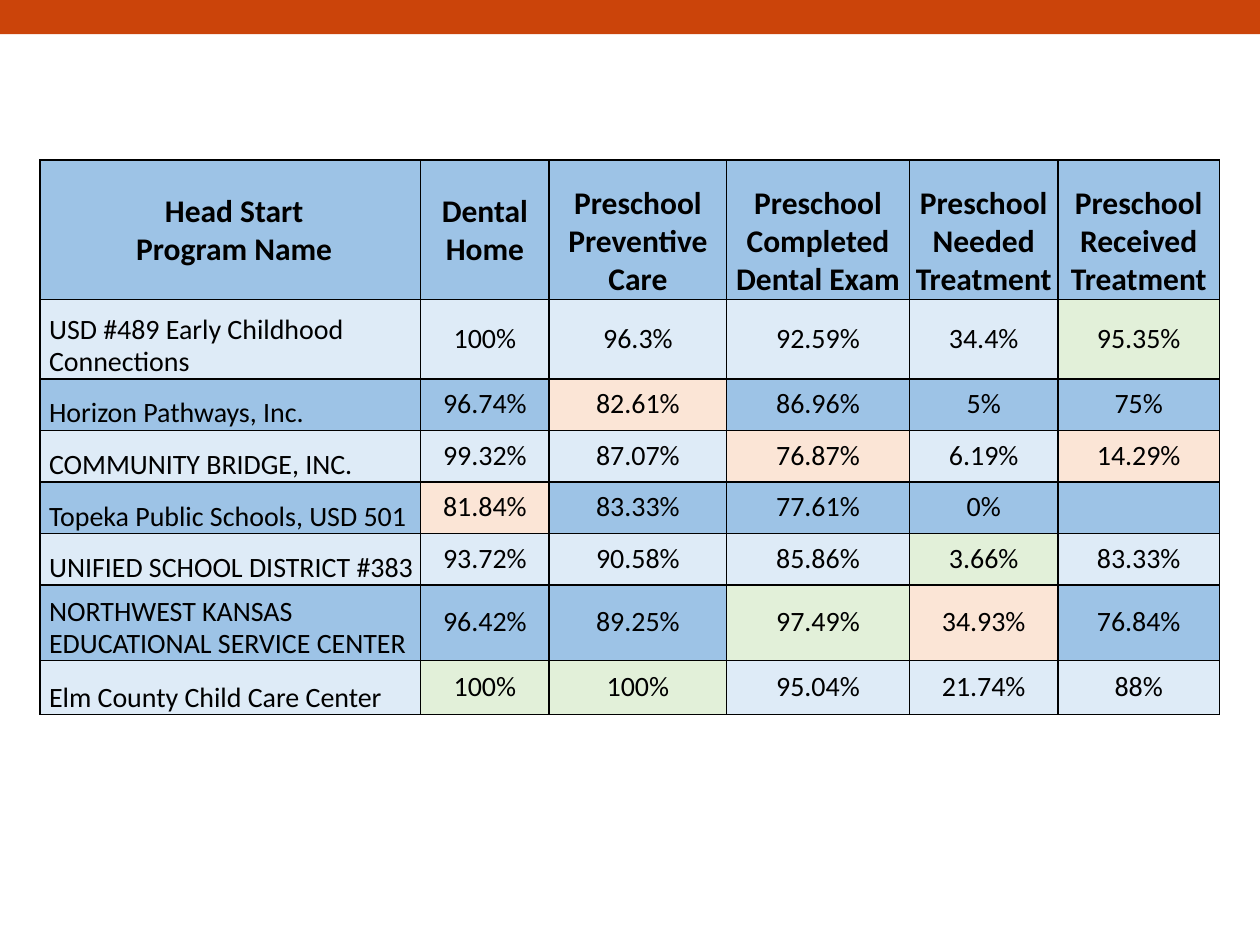
import pptx
import pptx.util
import pptx.dml.color
import pptx.enum.shapes
import pptx.enum.text
import pptx.oxml

Cm = pptx.util.Cm
Pt = pptx.util.Pt
ALIGN = pptx.enum.text.PP_ALIGN
ANCHOR = pptx.enum.text.MSO_ANCHOR

HEADS = ["Head Start\nProgram Name", "Dental Home", "Preschool Preventive Care",
         "Preschool Completed Dental Exam", "Preschool Needed Treatment",
         "Preschool Received Treatment"]
ROWS = [
    ["USD #489 Early Childhood Connections", "100%", "96.3%", "92.59%", "34.4%", "95.35%"],
    ["Horizon Pathways, Inc.", "96.74%", "82.61%", "86.96%", "5%", "75%"],
    ["COMMUNITY BRIDGE, INC.", "99.32%", "87.07%", "76.87%", "6.19%", "14.29%"],
    ["Topeka Public Schools, USD 501", "81.84%", "83.33%", "77.61%", "0%", ""],
    ["UNIFIED SCHOOL DISTRICT #383", "93.72%", "90.58%", "85.86%", "3.66%", "83.33%"],
    ["NORTHWEST KANSAS EDUCATIONAL SERVICE CENTER", "96.42%", "89.25%", "97.49%",
     "34.93%", "76.84%"],
    ["Elm County Child Care Center", "100%", "100%", "95.04%", "21.74%", "88%"],
]
WIDTHS = [7.67, 2.59, 3.58, 3.68, 3, 3.25]
HEIGHTS = [2.8, 1.6, 1.04, 1.04, 1.04, 1.04, 1.52, 1.09]
BEST = {(1, 5), (5, 4), (6, 3), (7, 1), (7, 2)}
WORST = {(2, 2), (3, 3), (3, 5), (4, 1), (6, 4)}
BANDS = ["9DC3E6", "DEEBF7"]


def color(code):
    return pptx.dml.color.RGBColor.from_string(code)


def apply(item, values):
    for name, value in values.items():
        setattr(item, name, value)


def paint(item, code):
    item.fill.solid()
    item.fill.fore_color.rgb = color(code)


def border(cell):
    props = cell._tc.get_or_add_tcPr()
    for side in "LRTB":
        props.append(pptx.oxml.parse_xml(
            f'<a:ln{side} xmlns:a="http://schemas.openxmlformats.org/drawingml/2006/main"'
            f' w="{Pt(1)}"><a:solidFill><a:srgbClr val="000000"/></a:solidFill></a:ln{side}>'))


def write(cell, text, para, font):
    frame = cell.text_frame
    for i, line in enumerate(text.split("\n")):
        part = frame.add_paragraph() if i else frame.paragraphs[0]
        apply(part, para)
        if line:
            run = part.add_run()
            run.text = line
            apply(run.font, {"name": "Calibri", **font})
            run.font.color.rgb = color("000000")


def shade(row, col):
    if (row, col) in BEST:
        return "E2F0D9"
    if (row, col) in WORST:
        return "FBE5D6"
    return BANDS[row % 2]


def draw_cell(cell, row, col, text):
    head, first = row == 0, col == 0
    apply(cell, {
        "margin_left": Cm(0.18 if first else 0.03),
        "margin_right": Cm(0.03),
        "margin_top": Cm(0.48 if head and col > 1 else 0.03),
        "margin_bottom": 0,
        "vertical_anchor": ANCHOR.BOTTOM if first and not head else ANCHOR.MIDDLE,
    })
    para = {"alignment": ALIGN.LEFT if first and not head else ALIGN.CENTER}
    if not head:
        para["line_spacing"] = Pt(18)
    write(cell, text, para, {"size": Pt(18 if head else 16), "bold": head})
    border(cell)
    paint(cell, shade(row, col))


def draw_band(slide, left, top, width, height):
    band = slide.shapes.add_shape(pptx.enum.shapes.MSO_SHAPE.RECTANGLE,
                                  Cm(left), Cm(top), Cm(width), Cm(height))
    band.shadow.inherit = False
    paint(band, "CB440A")
    band.line.fill.background()


def draw_table(slide, left, top):
    data = [HEADS] + ROWS
    table = slide.shapes.add_table(len(data), len(HEADS), Cm(left), Cm(top),
                                   Cm(sum(WIDTHS)), Cm(sum(HEIGHTS))).table
    apply(table, {"first_row": False, "horz_banding": False})
    for col, width in zip(table.columns, WIDTHS):
        col.width = Cm(width)
    for row, height in zip(table.rows, HEIGHTS):
        row.height = Cm(height)
    for r, texts in enumerate(data):
        for c, text in enumerate(texts):
            draw_cell(table.cell(r, c), r, c, text)


def main():
    deck = pptx.Presentation()
    apply(deck, {"slide_width": Cm(25.4), "slide_height": Cm(19.05)})
    slide = deck.slides.add_slide(deck.slide_layouts[6])
    draw_band(slide, 0, 0, 25.4, 0.69)
    draw_table(slide, 0.81, 3.23)
    deck.save("out.pptx")


if __name__ == "__main__":
    main()
